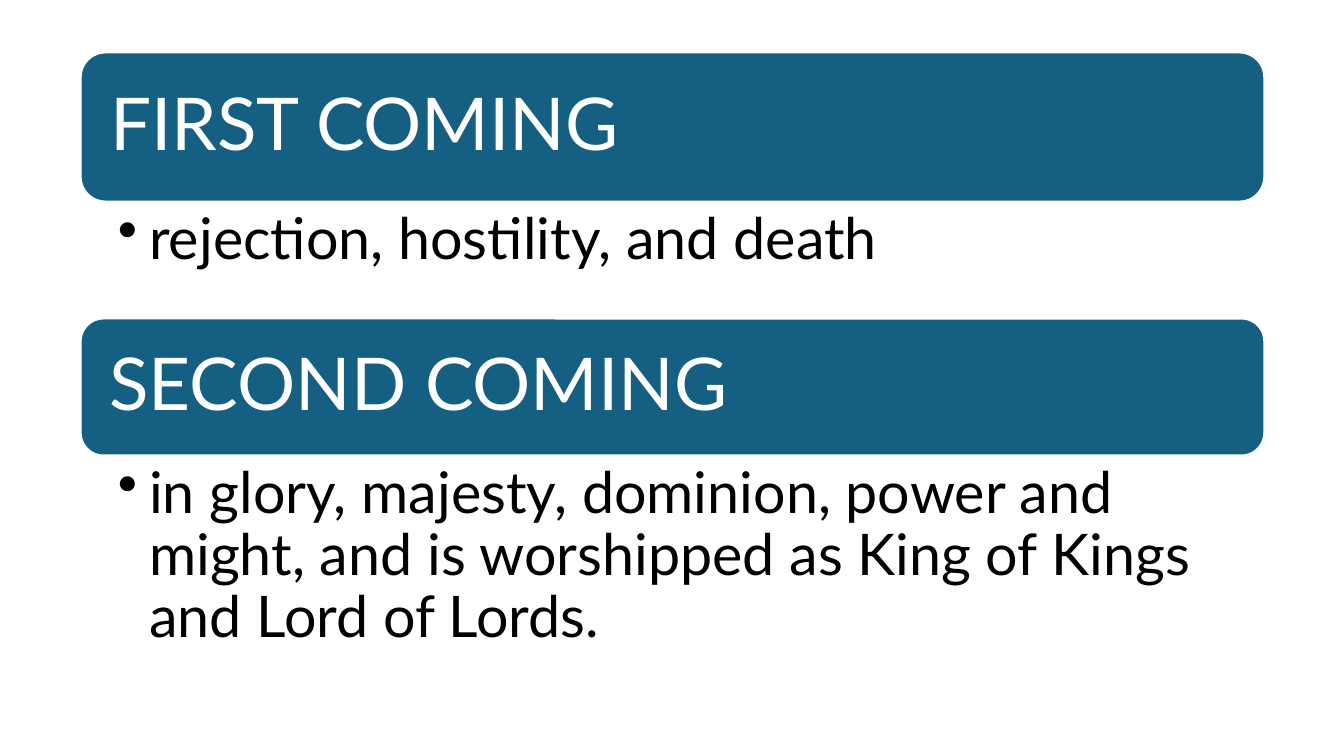
from dataclasses import dataclass

from lxml.etree import SubElement
from pptx import Presentation
from pptx.dml.color import RGBColor
from pptx.enum.shapes import MSO_SHAPE as Shape
from pptx.enum.text import MSO_ANCHOR as Anchor, PP_ALIGN as Align
from pptx.oxml.ns import qn
from pptx.text.text import TextFrame
from pptx.util import Inches, Pt


@dataclass(frozen=True)
class Theme:
    font: str = "Lato"
    banner: RGBColor = RGBColor(0x15, 0x60, 0x82)
    white: RGBColor = RGBColor(0xFF, 0xFF, 0xFF)
    black: RGBColor = RGBColor(0, 0, 0)
    heading_size: int = 52
    body_size: int = 41
    outline: float = 1.5


@dataclass(frozen=True)
class Section:
    heading: str
    body: str
    top: float
    banner_height: float
    body_height: float


THEME = Theme()
LEFT, WIDTH = 0.8, 11.74
BULLET_INDENT = 0.31
SECTIONS = [
    Section("FIRST COMING", "rejection, hostility, and death", 0.52, 1.48, 1.16),
    Section(
        "SECOND COMING",
        "in glory, majesty, dominion, power and might, "
        "and is worshipped as King of Kings and Lord of Lords.",
        3.16, 1.36, 2.69,
    ),
]


def write_text(tf: TextFrame, text: str, *, size: float, color: RGBColor,
               anchor: Anchor, insets: tuple[float, float, float, float],
               bullet: bool = False) -> None:
    """Fill a frame with one paragraph; insets run left, top, right, bottom."""
    tf.word_wrap = True
    tf.vertical_anchor = anchor
    tf.margin_left, tf.margin_top, tf.margin_right, tf.margin_bottom = map(Inches, insets)
    p = tf.paragraphs[0]
    p.alignment = Align.LEFT
    p.line_spacing = 0.9
    if bullet:
        p.level = 1
        pPr = p._p.get_or_add_pPr()
        pPr.set("marL", str(Inches(BULLET_INDENT)))
        pPr.set("indent", str(-Inches(BULLET_INDENT)))
        SubElement(pPr, qn("a:buChar")).set("char", "•")
    r = p.add_run()
    r.text = text
    r.font.name = THEME.font
    r.font.size = Pt(size)
    r.font.color.rgb = color


def add_section(slide, section: Section) -> None:
    banner = slide.shapes.add_shape(
        Shape.ROUNDED_RECTANGLE, Inches(LEFT), Inches(section.top),
        Inches(WIDTH), Inches(section.banner_height))
    banner.shadow.inherit = False
    banner.fill.solid()
    banner.fill.fore_color.rgb = THEME.banner
    banner.line.color.rgb = THEME.white
    banner.line.width = Pt(THEME.outline)
    write_text(banner.text_frame, section.heading, size=THEME.heading_size,
               color=THEME.white, anchor=Anchor.MIDDLE, insets=(0.22,) * 4)

    body = slide.shapes.add_textbox(
        Inches(LEFT), Inches(section.top + section.banner_height + 0.01),
        Inches(WIDTH), Inches(section.body_height))
    write_text(body.text_frame, section.body, size=THEME.body_size,
               color=THEME.black, anchor=Anchor.TOP,
               insets=(0.37, 0.07, 0.4, 0.07), bullet=True)


def main() -> None:
    prs = Presentation()
    prs.slide_width, prs.slide_height = Inches(13.33), Inches(7.5)
    slide = prs.slides.add_slide(prs.slide_layouts[6])
    for section in SECTIONS:
        add_section(slide, section)
    prs.save("out.pptx")


if __name__ == "__main__":
    main()
